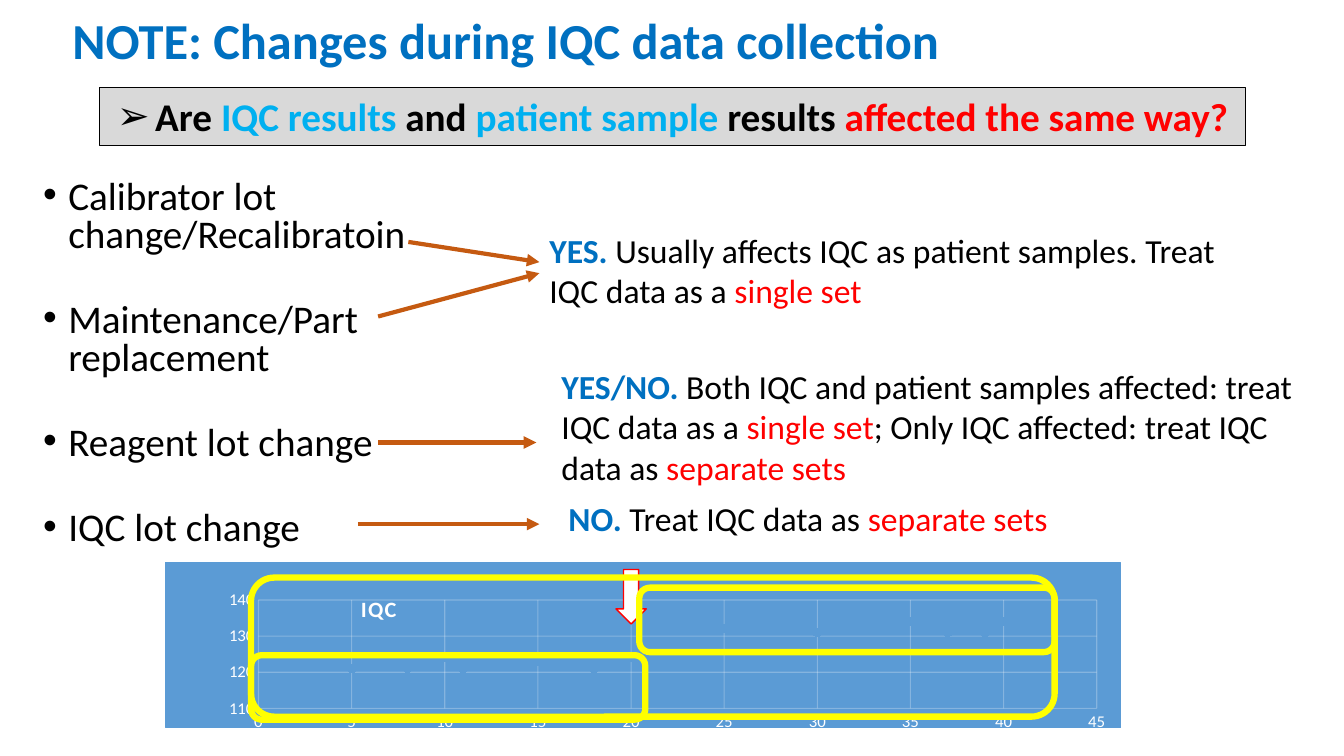
import pptx
import pptx.chart.data
import pptx.dml.color
import pptx.enum.chart
import pptx.enum.shapes
import pptx.enum.text
import pptx.oxml
import pptx.oxml.ns
import pptx.util
from lxml import etree

Inches, Pt, qn = pptx.util.Inches, pptx.util.Pt, pptx.oxml.ns.qn
SHAPE = pptx.enum.shapes.MSO_SHAPE
ANCHOR = pptx.enum.text.MSO_ANCHOR
ALIGN = pptx.enum.text.PP_ALIGN

# Content
FONT = "Calibri"
BLACK, WHITE, RED, BLUE, SKY = "000000", "FFFFFF", "FF0000", "0070C0", "00B0F0"
CHART_BLUE, ARROW_BROWN, YELLOW, GREY = "5B9BD5", "C55A11", "FFFF00", "D9D9D9"

TITLE = [("NOTE: Changes during IQC data collection", BLUE, True)]
QUESTION = [("Are ", BLACK, True), ("IQC results ", SKY, True), ("and ", BLACK, True),
            ("patient sample ", SKY, True), ("results", BLACK, True),
            (" affected the same way?", RED, True)]
CHANGES = ["Calibrator lot change/Recalibratoin", "Maintenance/Part replacement",
           "Reagent lot change", "IQC lot change"]
ANSWERS = [
    ((5.35, 2.23, 7.2, 0.91),
     [("YES. ", BLUE, True),
      ("Usually affects IQC as patient samples. Treat IQC data as a ", BLACK, False),
      ("single set", RED, False)]),
    ((5.47, 3.58, 7.8, 1.31),
     [("YES/NO. ", BLUE, True),
      ("Both IQC and patient samples affected: treat IQC data as a ", BLACK, False),
      ("single set", RED, False),
      ("; Only IQC affected: treat IQC data as ", BLACK, False),
      ("separate sets", RED, False)]),
    ((5.54, 4.89, 7.2, 0.5),
     [("NO. ", BLUE, True), ("Treat IQC data as ", BLACK, False),
      ("separate sets", RED, False)]),
]
ARROWS = [(4.05, 2.4, 5.35, 2.6), (3.75, 3.14, 5.35, 2.71),
          (3.75, 4.39, 5.32, 4.39), (3.55, 5.2, 5.35, 5.2)]
IQC_VALUES = [125, 122, 122, 122, 121, 122, 122, 121, 125, 124,
              121, 123, 123, 123, 123, 124, 123, 121, 125, 124,
              132, 133, 135, 135, 132, 134, 132, 135, 134, 131,
              134, 135, 132, 135, 134, 134, 131, 134, 131, 134]
DATA_SETS = [(2.49, 5.73, 7.97, 1.38), (6.34, 5.83, 4.12, 0.64), (2.49, 6.5, 3.91, 0.64)]


def color(hex_code):
    return pptx.dml.color.RGBColor.from_string(hex_code)


def box(place):
    return [Inches(length) for length in place]


def write_runs(paragraph, pieces, size):
    for words, hue, bold in pieces:
        run = paragraph.add_run()
        run.text = words
        run.font.name, run.font.size, run.font.bold = FONT, Pt(size), bold
        run.font.color.rgb = color(hue)


def set_bullet(paragraph, char, indent):
    props = paragraph._p.get_or_add_pPr()
    props.set("marL", str(Inches(indent)))
    props.set("indent", str(-Inches(indent)))
    etree.SubElement(props, qn("a:buFont")).set("typeface", "Arial")
    etree.SubElement(props, qn("a:buChar")).set("char", char)


def add_text(place):
    frame = slide.shapes.add_textbox(*box(place)).text_frame
    frame.word_wrap = True
    return frame


def add_shape(kind, place, fill, outline, width):
    shape = slide.shapes.add_shape(kind, *box(place))
    shape.shadow.inherit = False
    if fill:
        shape.fill.solid()
        shape.fill.fore_color.rgb = color(fill)
    else:
        shape.fill.background()
    shape.line.color.rgb = color(outline)
    shape.line.width = Pt(width)
    return shape


def set_layout(parent, position, **values):
    layout = parent.find(qn("c:layout"))
    if layout is None:
        layout = etree.Element(qn("c:layout"))
        parent.insert(position, layout)
    manual = etree.SubElement(layout, qn("c:manualLayout"))
    for tag, value in values.items():
        etree.SubElement(manual, qn("c:" + tag)).set("val", str(value))


deck = pptx.Presentation()
deck.slide_width, deck.slide_height = Inches(13.33), Inches(7.5)
slide = deck.slides.add_slide(deck.slide_layouts[6])

# List of changes
changes = add_text((0.33, 1.74, 4.33, 3.77))
for i, change in enumerate(CHANGES):
    item = changes.add_paragraph() if i else changes.paragraphs[0]
    set_bullet(item, "•", 0.25)
    item.line_spacing = 0.8
    item.space_before, item.space_after = Pt(10 if i else 0), Pt(24)
    write_runs(item, [(change, BLACK, False)], 28)

# Answers and the arrows that lead to them
for place, answer in ANSWERS:
    write_runs(add_text(place).paragraphs[0], answer, 24)

for ends in ARROWS:
    arrow = slide.shapes.add_connector(pptx.enum.shapes.MSO_CONNECTOR.STRAIGHT, *box(ends))
    arrow.line.color.rgb = color(ARROW_BROWN)
    arrow.line.width = Pt(3)
    etree.SubElement(arrow.line._get_or_add_ln(), qn("a:tailEnd")).set("type", "triangle")
    etree.SubElement(arrow._element.spPr, qn("a:effectLst"))

# IQC chart
iqc_data = pptx.chart.data.XyChartData()
iqc_series = iqc_data.add_series("Series 1")
for run_number, value in enumerate(IQC_VALUES, start=1):
    iqc_series.add_data_point(run_number, value)
chart = slide.shapes.add_chart(pptx.enum.chart.XL_CHART_TYPE.XY_SCATTER,
                               *box((1.64, 5.58, 9.48, 1.68)), iqc_data).chart
chart.has_legend = False
chart.font.name, chart.font.size = FONT, Pt(10)
chart.font.color.rgb = color(BLACK)
chart.plots[0].vary_by_categories = False

points = chart.plots[0].series[0]
points.smooth = False
points.format.line.fill.background()
points.marker.style = pptx.enum.chart.XL_MARKER_STYLE.CIRCLE
points.marker.size = 6
points.marker.format.fill.solid()
points.marker.format.fill.fore_color.rgb = color(CHART_BLUE)
points.marker.format.line.color.rgb = color(CHART_BLUE)

for axis, low, high, step in [(chart.category_axis, 0, 45, 5),
                              (chart.value_axis, 110, 140, 10)]:
    axis.minimum_scale, axis.maximum_scale, axis.major_unit = low, high, step
    axis.major_tick_mark = axis.minor_tick_mark = pptx.enum.chart.XL_TICK_MARK.NONE
    axis.format.line.fill.background()
    axis.tick_labels.font.name, axis.tick_labels.font.size = FONT, Pt(12)
    axis.tick_labels.font.color.rgb = color(WHITE)
    axis.has_major_gridlines = True
    grid = axis.major_gridlines.format.line
    grid.color.rgb = color(WHITE)
    grid.width = Pt(0.75)
    tint = axis.major_gridlines._xAx.find(qn("c:majorGridlines")).find(".//" + qn("a:srgbClr"))
    etree.SubElement(tint, qn("a:alpha")).set("val", "25000")

chart.has_title = True
chart.chart_title.include_in_layout = True
chart_name = chart.chart_title.text_frame.paragraphs[0]
write_runs(chart_name, [("IQC", WHITE, True)], 16)
chart_name.runs[0].font._element.set("spc", "100")
set_layout(chart.chart_title._element, 1, xMode="edge", yMode="edge", x=0.2, y=0.17)

chart_space = chart._chartSpace
set_layout(chart_space.find(".//" + qn("c:plotArea")), 0, layoutTarget="inner",
           xMode="edge", yMode="edge", x=0.097, y=0.225, w=0.878, h=0.658)
solid = f'<a:solidFill><a:srgbClr val="{CHART_BLUE}"/></a:solidFill>'
background = pptx.oxml.parse_xml(
    f'<c:spPr {pptx.oxml.ns.nsdecls("c", "a")}>{solid}<a:ln w="9525">{solid}</a:ln></c:spPr>')
chart_space.find(qn("c:chart")).addnext(background)

# Question banner
banner = add_shape(SHAPE.RECTANGLE, (0.99, 0.87, 11.36, 0.57), GREY, BLACK, 0.75).text_frame
banner.word_wrap = True
banner.vertical_anchor = ANCHOR.TOP
question = banner.paragraphs[0]
question.alignment = ALIGN.CENTER
set_bullet(question, "➢", 0.38)
write_runs(question, QUESTION, 28)

# Change marker and the frames round the data sets
add_shape(SHAPE.DOWN_ARROW, (6.11, 5.65, 0.3, 0.54), WHITE, RED, 1)
for place in DATA_SETS:
    add_shape(SHAPE.ROUNDED_RECTANGLE, place, None, YELLOW, 4.5)

# Title
title = add_text((0.62, -0.01, 11.5, 0.88))
title.vertical_anchor = ANCHOR.MIDDLE
title.paragraphs[0].line_spacing = 0.9
write_runs(title.paragraphs[0], TITLE, 36)

deck.save("out.pptx")
